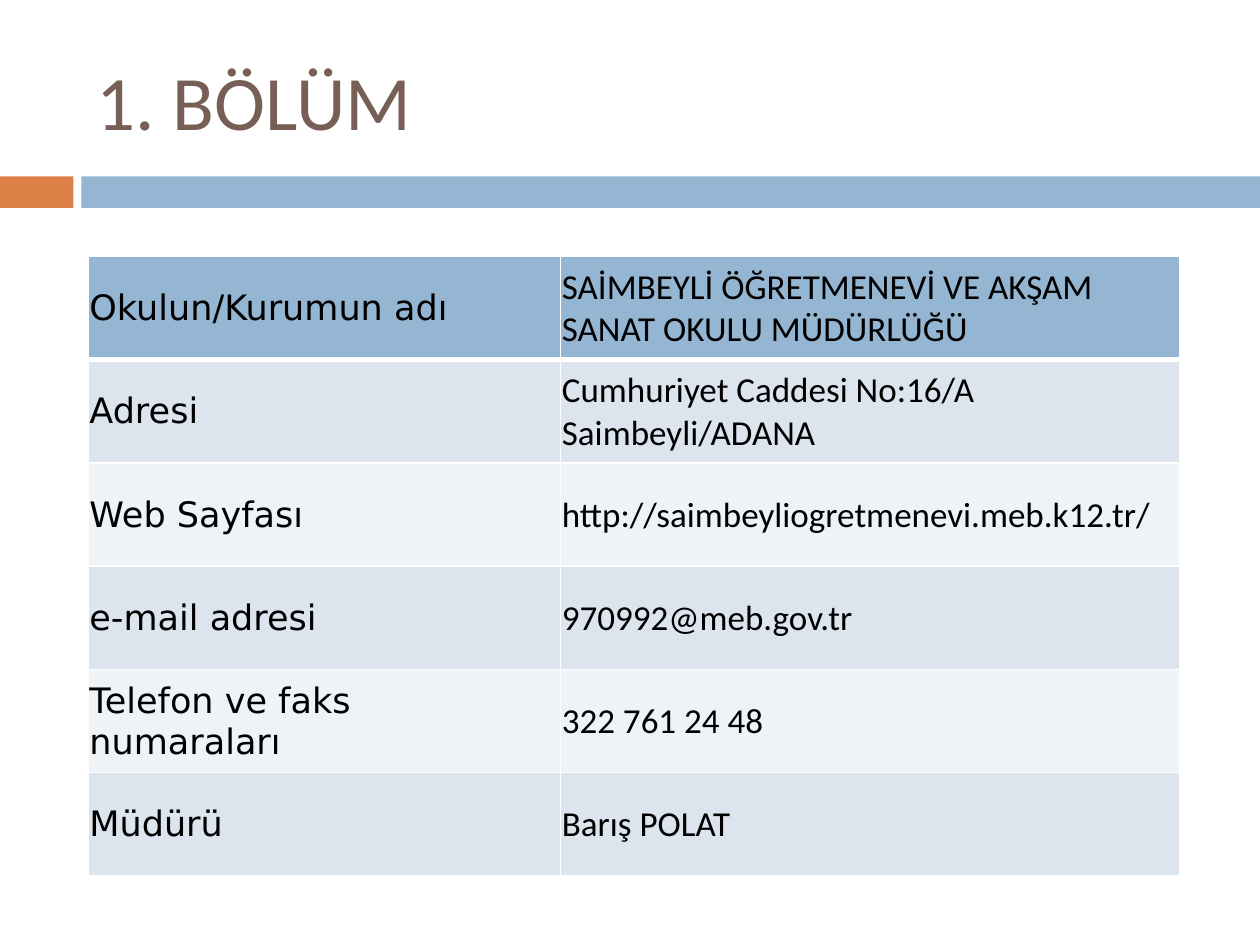
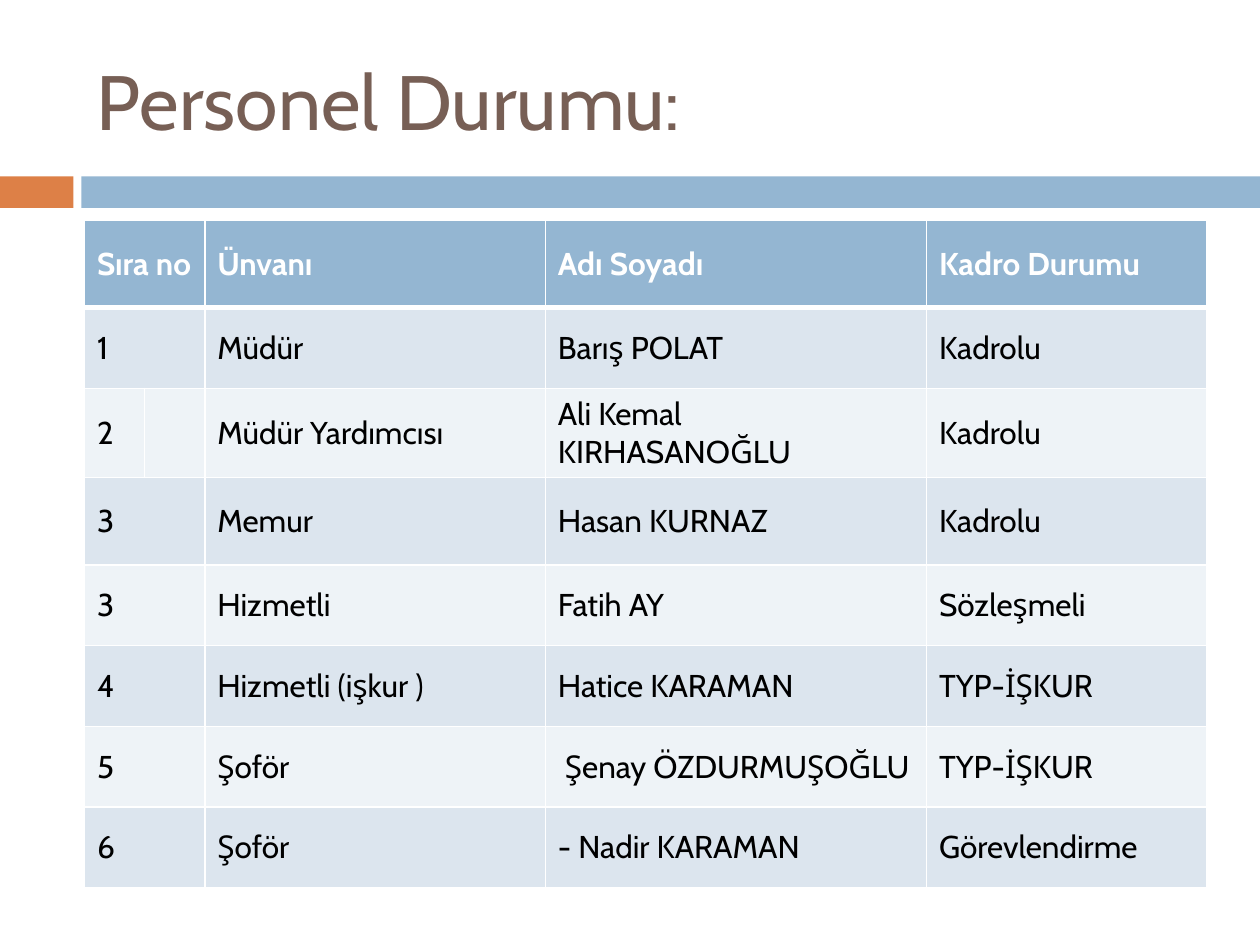
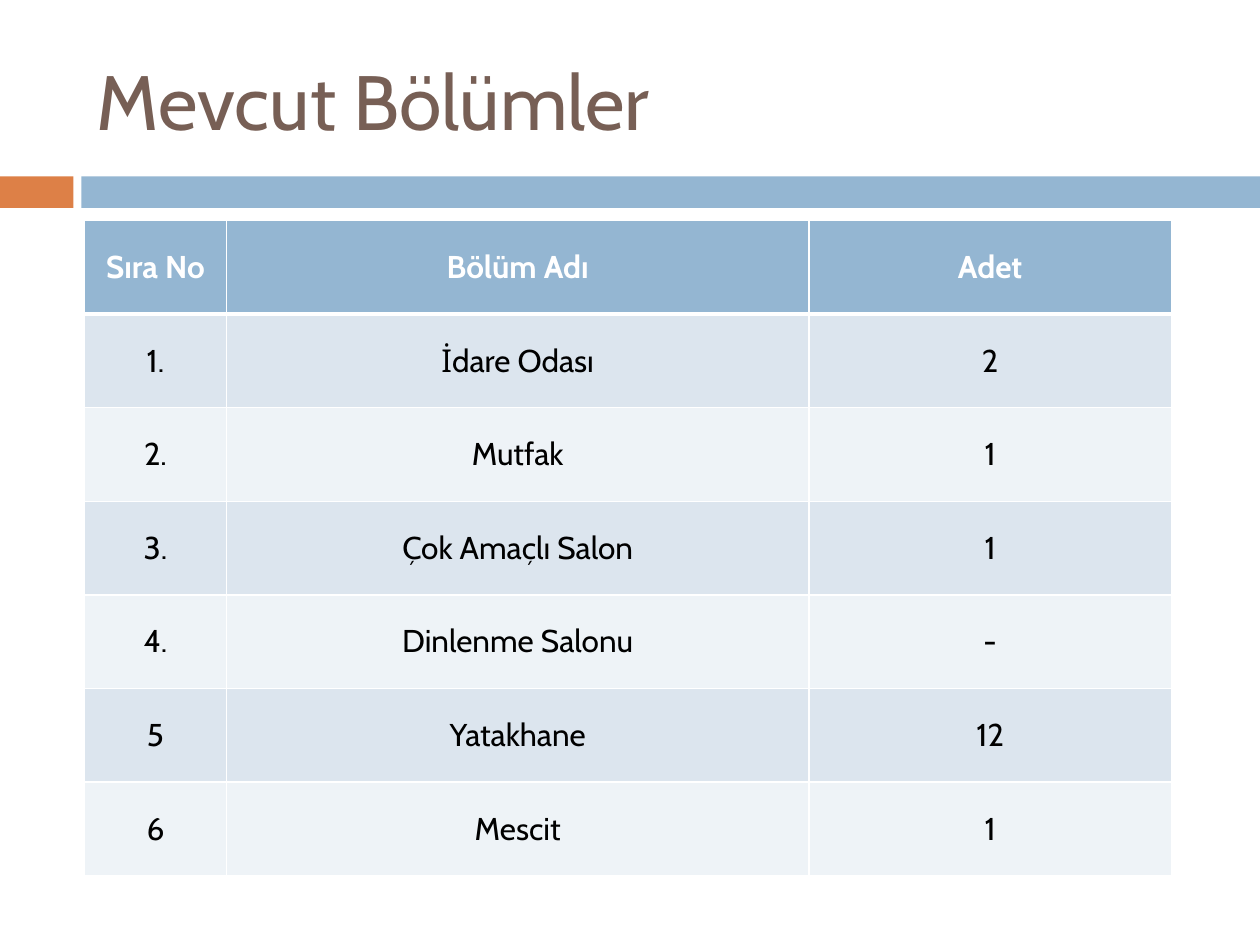
from dataclasses import dataclass

from lxml.etree import SubElement
from pptx import Presentation
from pptx.dml.color import RGBColor
from pptx.enum.shapes import MSO_SHAPE
from pptx.enum.text import MSO_ANCHOR, PP_ALIGN
from pptx.oxml.ns import qn
from pptx.util import Pt


@dataclass(frozen=True)
class Theme:
    accent: str = "DD8047"
    band: str = "94B6D2"
    title: str = "775F55"
    ink: str = "000000"
    white: str = "FFFFFF"
    odd_row: str = "DCE5EE"
    even_row: str = "EEF3F7"
    font: str = "Cabin"
    plain_font: str = "Calibri"
    label_font: str = "DejaVu Sans"
    title_size: float = 44
    card_size: float = 20
    list_size: float = 18
    rule: float = 1
    header_rule: float = 3


T = Theme()
WIDTH, HEIGHT = 720, 540
TITLE_BOX = (48.24, 18, 642, 78)
BAND_BOX = (0, 100.8, WIDTH, 18)

SCHOOL = [
    ("Okulun/Kurumun adı", "SAİMBEYLİ ÖĞRETMENEVİ VE AKŞAM SANAT OKULU MÜDÜRLÜĞÜ"),
    ("Adresi", "Cumhuriyet Caddesi No:16/A Saimbeyli/ADANA"),
    ("Web Sayfası", "http://saimbeyliogretmenevi.meb.k12.tr/"),
    ("e-mail adresi", "970992@meb.gov.tr"),
    ("Telefon ve faks numaraları", "322 761 24 48"),
    ("Müdürü", "Barış POLAT"),
]

STAFF = [
    ("Sıra no", "Ünvanı", "Adı Soyadı", "Kadro Durumu"),
    ("1", "Müdür", "Barış POLAT", "Kadrolu"),
    ("2", "Müdür Yardımcısı", "Ali Kemal KIRHASANOĞLU", "Kadrolu"),
    ("3", "Memur", "Hasan KURNAZ", "Kadrolu"),
    ("3", "Hizmetli", "Fatih AY", "Sözleşmeli"),
    ("4", "Hizmetli (işkur )", "Hatice KARAMAN", "TYP-İŞKUR"),
    ("5", "Şoför", " Şenay ÖZDURMUŞOĞLU", "TYP-İŞKUR"),
    ("6", "Şoför", "- Nadir KARAMAN", "Görevlendirme"),
]
SPLIT_ROW = 2  # the only row whose number cell stays divided

ROOMS = [
    ("Sıra No", "Bölüm Adı", "Adet"),
    ("1.", "İdare Odası", "2"),
    ("2.", "Mutfak", "1"),
    ("3.", "Çok Amaçlı Salon", "1"),
    ("4.", "Dinlenme Salonu", "-"),
    ("5", "Yatakhane", "12"),
    ("6", "Mescit", "1"),
]


def rgb(code):
    return RGBColor.from_string(code)


def add_run(p, text, size, font, color, bold=False):
    r = p.add_run()
    r.text = text
    r.font.size = Pt(size)
    r.font.name = font
    r.font.bold = bold
    r.font.color.rgb = rgb(color)


# Shared frame: title and the two-part band
def add_band(slide, box):
    x, y, w, h = box
    accent_w, blue_x = 42, 46.5
    for left, width, color in ((x, accent_w, T.accent),
                               (x + blue_x, w - blue_x, T.band)):
        sp = slide.shapes.add_shape(MSO_SHAPE.RECTANGLE, Pt(left), Pt(y), Pt(width), Pt(h))
        sp.shadow.inherit = False
        sp.fill.solid()
        sp.fill.fore_color.rgb = rgb(color)
        sp.line.fill.background()


def add_title(slide, box, text, font):
    tf = slide.shapes.add_textbox(*map(Pt, box)).text_frame
    tf.word_wrap = True
    tf.vertical_anchor = MSO_ANCHOR.MIDDLE
    add_run(tf.paragraphs[0], text, T.title_size, font, T.title)


def new_slide(prs, title, font=T.font):
    slide = prs.slides.add_slide(prs.slide_layouts[6])
    add_band(slide, BAND_BOX)
    add_title(slide, TITLE_BOX, title, font)
    return slide


# Tables
def set_borders(cell, bottom):
    tcPr = cell._tc.get_or_add_tcPr()
    widths = {"a:lnL": T.rule, "a:lnR": T.rule, "a:lnT": T.rule, "a:lnB": bottom}
    for i, (tag, width) in enumerate(widths.items()):
        ln = SubElement(tcPr, qn(tag), w=str(Pt(width)))
        fill = SubElement(ln, qn("a:solidFill"))
        SubElement(fill, qn("a:srgbClr"), val=T.white)
        tcPr.insert(i, ln)


def add_grid(slide, origin, cols, rows):
    """Empty table with a blue header row and alternating body rows."""
    shape = slide.shapes.add_table(len(rows), len(cols), *map(Pt, origin),
                                   Pt(sum(cols)), Pt(sum(rows)))
    table = shape.table
    table.first_row = table.horz_banding = False
    for col, width in zip(table.columns, cols):
        col.width = Pt(width)
    for i, (row, height) in enumerate(zip(table.rows, rows)):
        row.height = Pt(height)
        color = T.band if i == 0 else T.odd_row if i % 2 else T.even_row
        for cell in row.cells:
            cell.fill.solid()
            cell.fill.fore_color.rgb = rgb(color)
            cell.vertical_anchor = MSO_ANCHOR.MIDDLE
            set_borders(cell, T.rule if i else T.header_rule)
    return table


def fill_list_row(table, i, columns, texts, align):
    for j, text in zip(columns, texts):
        p = table.cell(i, j).text_frame.paragraphs[0]
        p.alignment = align
        add_run(p, text, T.list_size, T.font, T.ink if i else T.white, bold=i == 0)


# Slide types
def school_slide(prs):
    slide = new_slide(prs, "1. BÖLÜM", T.plain_font)
    table = add_grid(slide, (50.4, 146.5), (270, 354), [59] * len(SCHOOL))
    for i, texts in enumerate(SCHOOL):
        for j, (text, font, right) in enumerate(zip(texts, (T.label_font, T.plain_font), (20, 0.7))):
            cell = table.cell(i, j)
            cell.margin_left = cell.margin_top = Pt(0.7)
            cell.margin_right, cell.margin_bottom = Pt(right), Pt(0)
            add_run(cell.text_frame.paragraphs[0], text, T.card_size, font, T.ink)


def staff_slide(prs):
    slide = new_slide(prs, "Personel Durumu:")
    tall, low = 49.8, 46.2
    rows = [tall if i in (0, 2, 3) else low for i in range(len(STAFF))]
    rows[SPLIT_ROW] = 51
    table = add_grid(slide, (48.24, 126), (34.4, 34.4, 194.6, 217.8, 160.3), rows)
    for i, texts in enumerate(STAFF):
        if i != SPLIT_ROW:
            table.cell(i, 0).merge(table.cell(i, 1))
        fill_list_row(table, i, (0, 2, 3, 4), texts, PP_ALIGN.LEFT)


def rooms_slide(prs):
    slide = new_slide(prs, "Mevcut Bölümler")
    table = add_grid(slide, (48.24, 126), (81.2, 332.8, 207.2), [53.5] * len(ROOMS))
    for i, texts in enumerate(ROOMS):
        fill_list_row(table, i, range(3), texts, PP_ALIGN.CENTER)


def main():
    prs = Presentation()
    prs.slide_width, prs.slide_height = Pt(WIDTH), Pt(HEIGHT)
    for build in (school_slide, staff_slide, rooms_slide):
        build(prs)
    prs.save("out.pptx")


if __name__ == "__main__":
    main()
